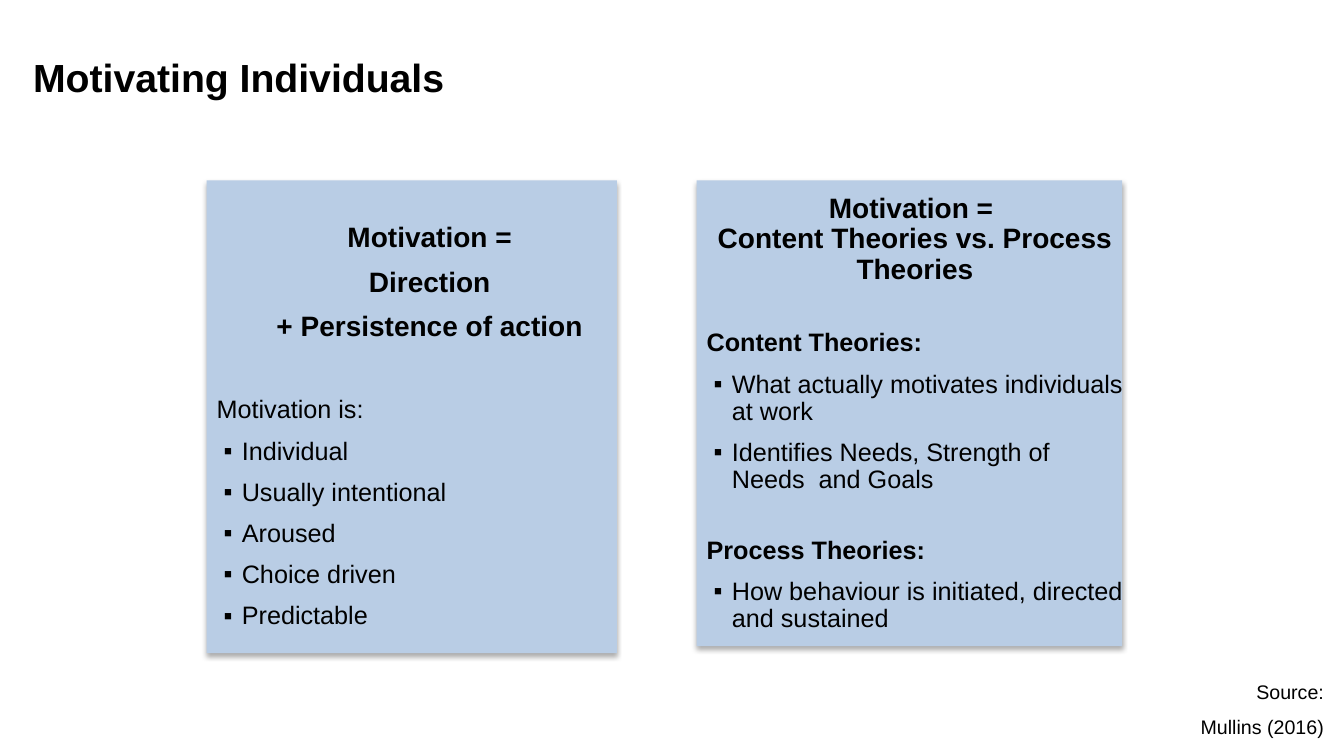
from lxml import etree
from pptx import Presentation, util as u
from pptx.dml.color import RGBColor
from pptx.enum import shapes, text
from pptx.oxml import ns, parse_xml

ALIGN = {"l": text.PP_ALIGN.LEFT, "c": text.PP_ALIGN.CENTER, "r": text.PP_ALIGN.RIGHT}
SHADOW = (
    f'<a:effectLst {ns.nsdecls("a")}>'
    '<a:outerShdw blurRad="44450" dist="27940" dir="5400000" rotWithShape="0">'
    '<a:srgbClr val="000000"><a:alpha val="32000"/></a:srgbClr>'
    '</a:outerShdw></a:effectLst>'
)


def tint(code):
    return RGBColor.from_string(code)


class Deck:
    font = "Arial"
    ink = "000000"
    panel = "B9CDE5"

    def __init__(self):
        self.prs = Presentation()
        self.prs.slide_width = u.Inches(13.33)
        self.prs.slide_height = u.Inches(7.5)
        self.slide = self.prs.slides.add_slide(self.prs.slide_layouts[6])

    def place(self, left, top, width, height):
        col = self.prs.slide_width / 100
        row = self.prs.slide_height / 100
        return [round(n * unit) for n, unit in zip((left, top, width, height), (col, row) * 2)]

    def card(self, *area):
        box = self.slide.shapes.add_shape(shapes.MSO_SHAPE.RECTANGLE, *self.place(*area))
        box.fill.solid()
        box.fill.fore_color.rgb = tint(self.panel)
        box.line.fill.background()
        box._element.spPr.append(parse_xml(SHADOW))

    def words(self, area, items):
        frame = self.slide.shapes.add_textbox(*self.place(*area)).text_frame
        frame.word_wrap = True
        frame.text = "\n".join(item[0] for item in items)
        for i, (para, (_, look, *gap)) in enumerate(zip(frame.paragraphs, items)):
            self.style(para, gap[0] if gap else 10 if i else 0, **look)

    def style(self, para, gap, size=18, bold=False, align="l", indent=0.25, mark=False):
        prop = para._p.get_or_add_pPr()
        if indent:
            prop.set("marL", str(u.Inches(indent)))
            prop.set("indent", str(-u.Inches(0.18 if mark else indent)))
        if mark:
            etree.SubElement(prop, ns.qn("a:buFont")).set("typeface", self.font)
            etree.SubElement(prop, ns.qn("a:buChar")).set("char", "▪")
        para.alignment = ALIGN[align]
        para.line_spacing = 0.9
        para.space_before = u.Pt(gap)
        for run in para.runs:
            run.font.name = self.font
            run.font.size = u.Pt(size)
            run.font.bold = bold
            run.font.color.rgb = tint(self.ink)


TITLE = dict(size=28, bold=True, indent=0)
HEAD = dict(size=20, bold=True, align="c")
WIDE = dict(HEAD, indent=0)
PLAIN = dict()
LEAD = dict(bold=True)
POINT = dict(mark=True)
NOTE = dict(size=14, align="r")


def main():
    deck = Deck()
    deck.card(51.84, 23.87, 31.66, 61.6)
    deck.card(15.38, 23.87, 30.53, 62.53)
    deck.words((1.73, 7.07, 67.14, 14.13), [("Motivating Individuals", TITLE)])
    traits = ["Individual", "Usually intentional", "Aroused", "Choice driven", "Predictable"]
    deck.words((15.38, 28.93, 33.76, 56.53), [
        ("Motivation = ", HEAD),
        ("Direction ", HEAD),
        ("+ Persistence of action ", HEAD),
        ("Motivation is:", PLAIN, 39),
        *((trait, POINT) for trait in traits),
    ])
    deck.words((51.84, 25.07, 32.48, 53.87), [
        ("Motivation = \vContent Theories vs. Process Theories", WIDE),
        ("Content Theories:", LEAD, 32),
        ("What actually motivates individuals at work", POINT),
        ("Identifies Needs, Strength of Needs  and Goals", POINT),
        ("Process Theories:", LEAD, 31),
        ("How behaviour is initiated, directed and sustained", POINT),
    ])
    deck.words((79.37, 89.6, 19.88, 10.4), [("Source:", NOTE), ("Mullins (2016)", NOTE)])
    deck.prs.save("out.pptx")


if __name__ == "__main__":
    main()
